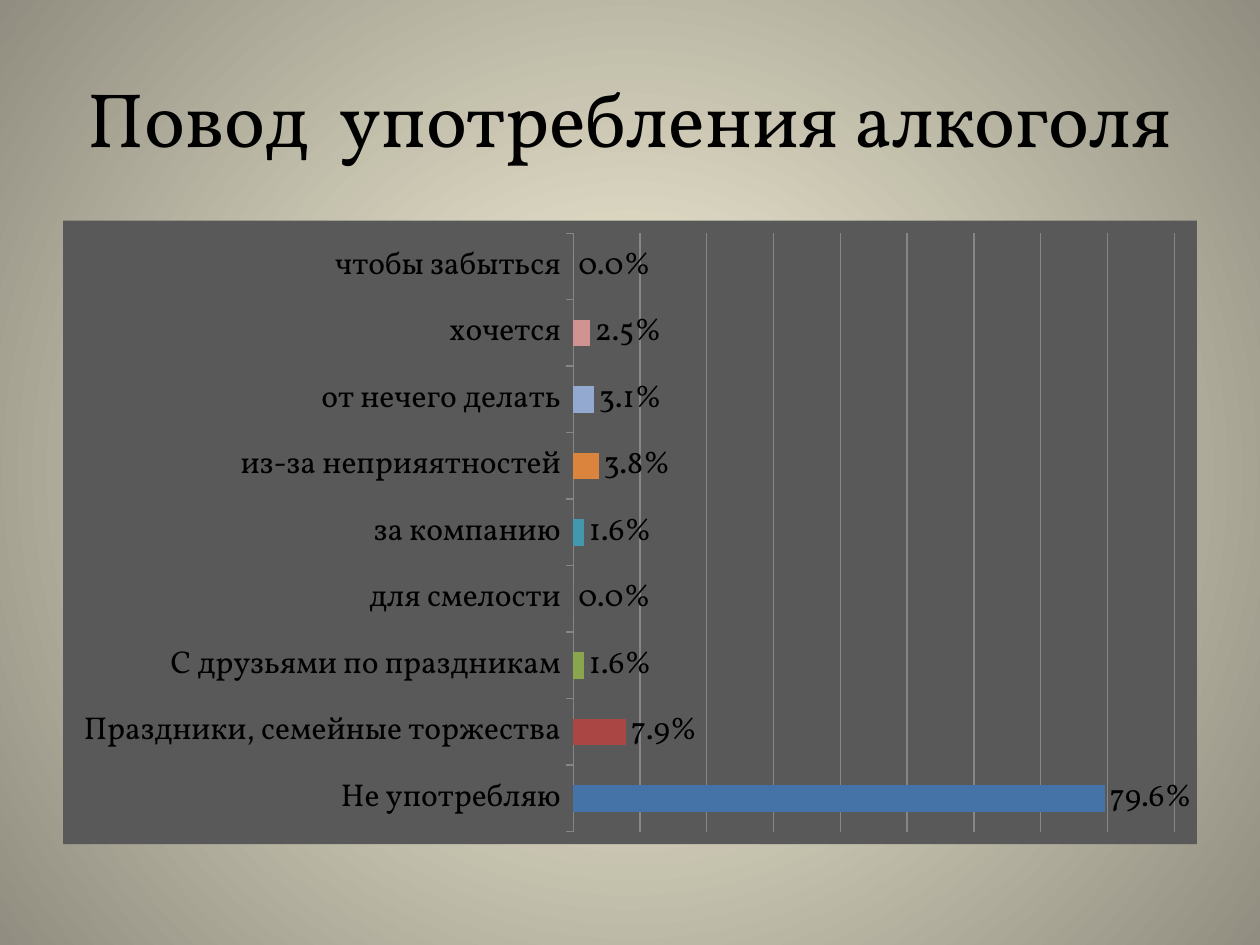
from dataclasses import dataclass

from lxml.etree import SubElement as Sub
from pptx import Presentation
from pptx.chart.chart import Chart
from pptx.chart.data import CategoryChartData as Data
from pptx.dml.color import RGBColor as Rgb
from pptx.enum.chart import XL_CHART_TYPE as Kind
from pptx.enum.chart import XL_LABEL_POSITION as Spot
from pptx.enum.chart import XL_TICK_LABEL_POSITION as Tick
from pptx.enum.chart import XL_TICK_MARK as Mark
from pptx.enum.text import MSO_ANCHOR as Anchor
from pptx.enum.text import PP_ALIGN as Align
from pptx.oxml.ns import qn
from pptx.slide import Slide
from pptx.util import Cm, Pt

FONT = "Vollkorn"
FORM = "0.0%"
HEX = {
    "text": "000000",
    "glow": "FCF7DD",
    "edge": "918E81",
    "panel": "595959",
    "grid": "868686",
}


@dataclass
class Bar:
    name: str
    share: float
    color: str


BARS = [
    Bar("Не употребляю", 0.796, "4572A7"),
    Bar("Праздники, семейные торжества", 0.079, "AA4643"),
    Bar("С друзьями по праздникам", 0.016, "89A54E"),
    Bar("для смелости", 0, "71588F"),
    Bar("за компанию", 0.016, "4198AF"),
    Bar("из-за неприяятностей", 0.038, "DB843D"),
    Bar("от нечего делать", 0.031, "93A9CF"),
    Bar("хочется", 0.025, "D19392"),
    Bar("чтобы забыться", 0, "B9CD96"),
]


def style(font, size: float, color: str) -> None:
    font.name = FONT
    font.size = Pt(size)
    font.color.rgb = Rgb.from_string(color)


def write(frame, text: str, *, size: float, color: str = HEX["text"],
          align=Align.CENTER, anchor=Anchor.MIDDLE) -> None:
    frame.word_wrap = True
    frame.vertical_anchor = anchor
    para = frame.paragraphs[0]
    para.alignment = align
    run = para.add_run()
    run.text = text
    style(run.font, size, color)


def paint(slide: Slide) -> None:
    fill = slide.background.fill
    fill.gradient()
    for stop, name in zip(fill.gradient_stops, ("glow", "edge")):
        stop.color.rgb = Rgb.from_string(HEX[name])
    grad = next(slide.element.iter(qn("a:gradFill")))
    grad.remove(grad.find(qn("a:lin")))
    ring = Sub(grad, qn("a:path"), {"path": "circle"})
    Sub(ring, qn("a:fillToRect"), dict.fromkeys("ltrb", "50000"))


def frame_plot(chart: Chart, **box: float) -> None:
    area = next(chart.element.iter(qn("c:plotArea")))
    old = area.find(qn("c:layout"))
    if old is not None:
        area.remove(old)
    lay = Sub(area, qn("c:layout"))
    area.insert(0, lay)
    man = Sub(lay, qn("c:manualLayout"))
    rules = {"layoutTarget": "inner", "xMode": "edge", "yMode": "edge", **box}
    for tag, val in rules.items():
        Sub(man, qn(f"c:{tag}"), {"val": str(val)})


def fill_panel(chart: Chart) -> None:
    space = chart.element
    prop = space.makeelement(qn("c:spPr"), {})
    space.find(qn("c:chart")).addnext(prop)
    fill = Sub(prop, qn("a:solidFill"))
    Sub(fill, qn("a:srgbClr"), {"val": HEX["panel"]})
    Sub(Sub(prop, qn("a:ln")), qn("a:noFill"))


def draw_bars(slide: Slide, bars: list[Bar]) -> None:
    data = Data(number_format=FORM)
    data.categories = [bar.name for bar in bars]
    data.add_series("Series 1", [bar.share for bar in bars])
    chart = slide.shapes.add_chart(
        Kind.BAR_CLUSTERED, Cm(1.27), Cm(4.45), Cm(22.86), Cm(12.57), data
    ).chart
    chart.has_legend = False
    chart.has_title = False
    style(chart.font, 18, HEX["text"])
    fill_panel(chart)
    frame_plot(chart, x=0.45, y=0.02, w=0.53, h=0.96)

    cat, val = chart.category_axis, chart.value_axis
    cat.major_tick_mark = Mark.OUTSIDE
    cat.tick_label_position = Tick.NEXT_TO_AXIS
    val.minimum_scale, val.maximum_scale, val.major_unit = 0, 0.9, 0.1
    val.has_major_gridlines = True
    val.tick_labels.number_format = FORM
    val.tick_labels.number_format_is_linked = False
    val.visible = False
    for line in (cat.format.line, val.major_gridlines.format.line):
        line.color.rgb = Rgb.from_string(HEX["grid"])
        line.width = Pt(0.75)

    plot = chart.plots[0]
    plot.gap_width = 150
    plot.vary_by_categories = True
    plot.has_data_labels = True
    labels = plot.data_labels
    labels.show_value = True
    labels.number_format = FORM
    labels.number_format_is_linked = False
    labels.position = Spot.OUTSIDE_END
    style(labels.font, 18, HEX["text"])
    row = plot.series[0]
    row.invert_if_negative = False
    for i, bar in enumerate(bars):
        fill = row.points[i].format.fill
        fill.solid()
        fill.fore_color.rgb = Rgb.from_string(bar.color)


def main() -> None:
    deck = Presentation()
    deck.slide_width, deck.slide_height = Cm(25.4), Cm(19.05)
    slide = deck.slides.add_slide(deck.slide_layouts[5])
    paint(slide)
    title = slide.shapes.title
    title.left, title.top = Cm(1.27), Cm(0.76)
    title.width, title.height = Cm(22.86), Cm(3.18)
    write(title.text_frame, "Повод  употребления алкоголя", size=44)
    draw_bars(slide, BARS)
    deck.save("out.pptx")


if __name__ == "__main__":
    main()
